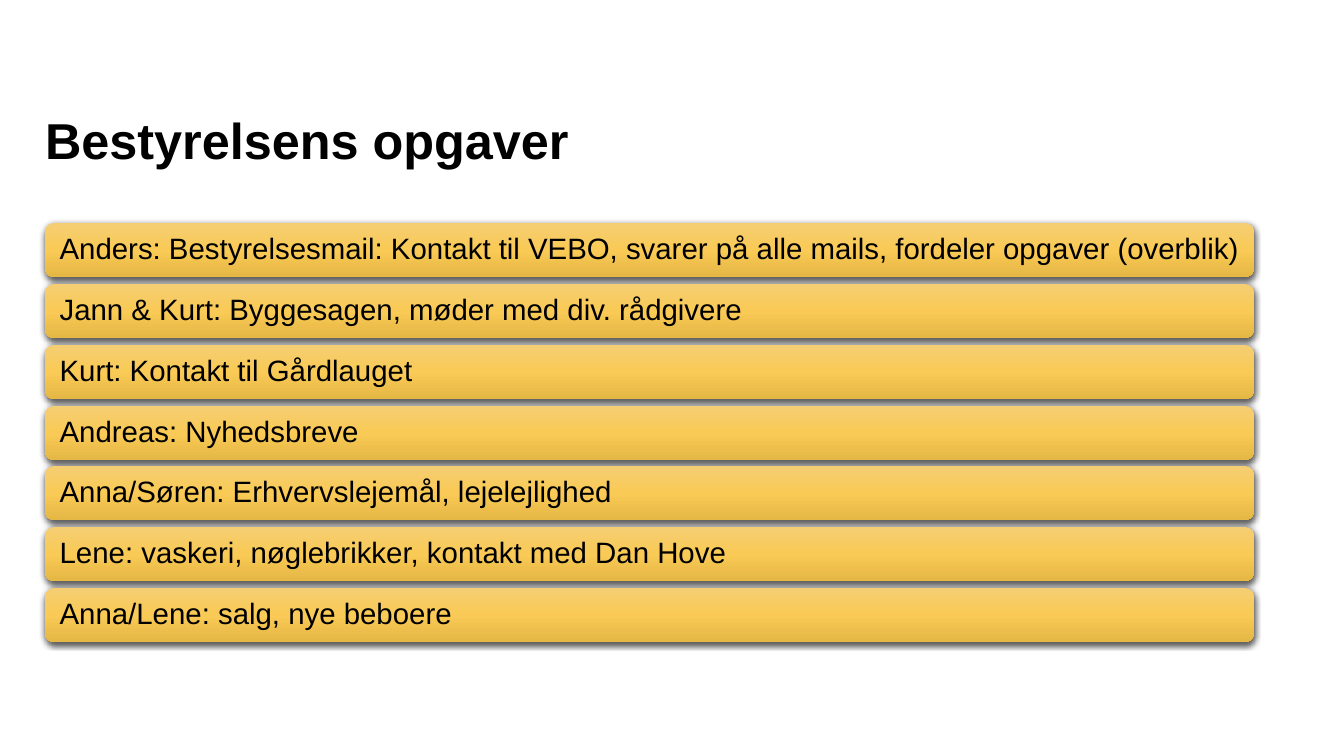
from copy import deepcopy

from lxml.etree import SubElement
from pptx import Presentation
from pptx.dml.color import RGBColor as Rgb
from pptx.enum.shapes import MSO_SHAPE as Shape
from pptx.enum.text import MSO_ANCHOR as Anchor, MSO_AUTO_SIZE as Fit, PP_ALIGN as Align
from pptx.oxml.ns import qn
from pptx.util import Emu, Pt

SCALE = 914400 / 100.8
COLORS = {"text": "000000", "shade": "000000",
          "light": "F5CE73", "mid": "F9CA55", "dark": "E5B744"}
STOPS = [(0, "light"), (0.5, "mid"), (1, "dark")]
TITLE = "Bestyrelsens opgaver"
TASKS = [
    "Anders: Bestyrelsesmail: Kontakt til VEBO, svarer på alle mails, fordeler opgaver (overblik)",
    "Jann & Kurt: Byggesagen, møder med div. rådgivere",
    "Kurt: Kontakt til Gårdlauget",
    "Andreas: Nyhedsbreve",
    "Anna/Søren: Erhvervslejemål, lejelejlighed",
    "Lene: vaskeri, nøglebrikker, kontakt med Dan Hove",
    "Anna/Lene: salg, nye beboere",
]
LEFT, WIDTH, HEIGHT = 45, 1209, 54
FIRST, LAST = 223, 588


def px(n):
    return Emu(round(n * SCALE))


def color(name):
    return Rgb.from_string(COLORS[name])


def apply(obj, values):
    for name, value in values.items():
        setattr(obj, name, value)


class Deck:
    font = "Arial"

    def __init__(self, width, height):
        self.file = Presentation()
        apply(self.file, {"slide_width": px(width), "slide_height": px(height)})
        self.slide = self.file.slides.add_slide(self.file.slide_layouts[5])

    def label(self, shape, text, size, bold, lead, inset, anchor):
        frame = shape.text_frame
        frame.text = text
        apply(frame, {"word_wrap": True, "auto_size": Fit.NONE, "vertical_anchor": anchor,
                      "margin_left": px(inset), "margin_right": px(inset),
                      "margin_top": 0, "margin_bottom": 0})
        para = frame.paragraphs[0]
        apply(para, {"alignment": Align.LEFT, "line_spacing": lead})
        apply(para.font, {"name": self.font, "size": Pt(size), "bold": bold})
        para.font.color.rgb = color("text")

    def title(self, text, x, y, w, h):
        shape = self.slide.shapes.title
        apply(shape, {"left": px(x), "top": px(y), "width": px(w), "height": px(h)})
        self.label(shape, text, 36, True, 0.97, 0, Anchor.TOP)

    def bar(self, text, x, y, w, h):
        shape = self.slide.shapes.add_shape(
            Shape.ROUNDED_RECTANGLE, px(x), px(y), px(w), px(h))
        shape.line.fill.background()
        self.shade(shape)
        self.glow(shape)
        self.label(shape, text, 21, False, 0.9, 12, Anchor.MIDDLE)

    def shade(self, shape):
        """Fill the shape with the three-stop gradient, light at the top."""
        fill = shape.fill
        fill.gradient()
        fill.gradient_angle = 270
        stops = shape.element.spPr.find(qn("a:gradFill")).find(qn("a:gsLst"))
        stops.append(deepcopy(stops[0]))
        for stop, (place, name) in zip(fill.gradient_stops, STOPS):
            stop.position = place
            stop.color.rgb = color(name)

    def glow(self, shape):
        """Give the shape a soft shadow straight below it."""
        shape.shadow.inherit = False
        effects = shape.element.spPr.find(qn("a:effectLst"))
        outer = SubElement(effects, qn("a:outerShdw"), blurRad=str(Pt(4.5)),
                           dist=str(Pt(1.5)), dir="5400000", algn="ctr", rotWithShape="0")
        tone = SubElement(outer, qn("a:srgbClr"), val=COLORS["shade"])
        SubElement(tone, qn("a:alpha"), val="63000")


def main():
    deck = Deck(1344, 756)
    deck.title(TITLE, LEFT, 113, WIDTH, 74)
    step = (LAST - FIRST) / (len(TASKS) - 1)
    for i, task in enumerate(TASKS):
        deck.bar(task, LEFT, round(FIRST + i * step), WIDTH, HEIGHT)
    deck.file.save("out.pptx")


if __name__ == "__main__":
    main()
